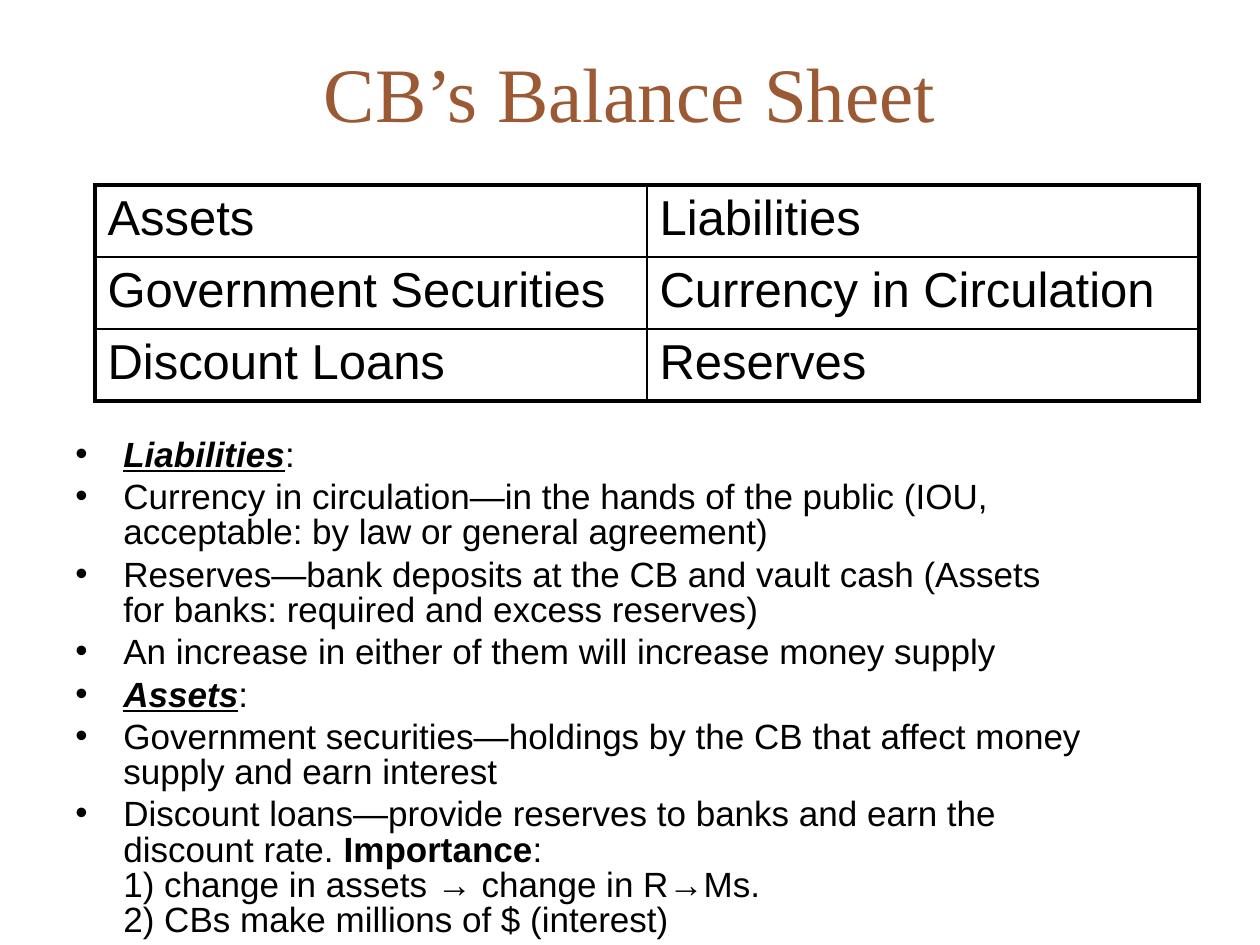
"""Build the central bank balance sheet slide."""
import pptx
import pptx.dml.color
import pptx.enum.text
import pptx.oxml
import pptx.oxml.ns
import pptx.util

THEME = {
    "ink": "000000", "title": "9B5934",
    "title_font": "Times New Roman", "body_font": "Arial",
    "title_size": 44, "table_size": 28, "body_size": 20,
    "outer_line": 2.25, "inner_line": 1,
}
SCALE = 914400 / 126


def px(length):
    return pptx.util.Emu(round(length * SCALE))


def style(font, name, size, color):
    font.name = name
    font.size = pptx.util.Pt(size)
    font.color.rgb = pptx.dml.color.RGBColor.from_string(color)


deck = pptx.Presentation()
deck.slide_width, deck.slide_height = px(1260), px(945)
page = deck.slides.add_slide(deck.slide_layouts[6])

title_box = page.shapes.add_textbox(px(63), px(38), px(1134), px(107))
title_box.text_frame.word_wrap = True
title_box.text_frame.vertical_anchor = pptx.enum.text.MSO_ANCHOR.MIDDLE
title_box.text_frame.text = "CB’s Balance Sheet"
title_para = title_box.text_frame.paragraphs[0]
title_para.alignment = pptx.enum.text.PP_ALIGN.CENTER
style(title_para.runs[0].font, THEME["title_font"], THEME["title_size"], THEME["title"])

entries = [
    ["Assets", "Liabilities"],
    ["Government Securities", "Currency in Circulation"],
    ["Discount Loans", "Reserves"],
]
row_count, column_count = len(entries), len(entries[0])
table = page.shapes.add_table(
    row_count, column_count, px(95), px(185), px(552 * column_count), px(72 * row_count)
).table
table.first_row = table.horz_banding = False
for row_index, labels in enumerate(entries):
    for column_index, label in enumerate(labels):
        cell = table.cell(row_index, column_index)
        cell.text = label
        style(cell.text_frame.paragraphs[0].runs[0].font,
              THEME["body_font"], THEME["table_size"], THEME["ink"])
        outer_edges = {
            "lnL": column_index == 0,
            "lnR": column_index == column_count - 1,
            "lnT": row_index == 0,
            "lnB": row_index == row_count - 1,
        }
        for edge, is_outer in outer_edges.items():
            width = pptx.util.Pt(THEME["outer_line" if is_outer else "inner_line"])
            cell._tc.get_or_add_tcPr().append(pptx.oxml.parse_xml(
                f'<a:{edge} {pptx.oxml.ns.nsdecls("a")} w="{width}"><a:solidFill>'
                f'<a:srgbClr val="{THEME["ink"]}"/></a:solidFill></a:{edge}>'))
        cell.fill.background()

heading, strong, plain = "heading", "strong", "plain"
notes = [
    [("Liabilities", heading), (":", plain)],
    [("Currency in circulation—in the hands of the public (IOU, "
      "acceptable: by law or general agreement)", plain)],
    [("Reserves—bank deposits at the CB and vault cash (Assets "
      "for banks: required and excess reserves)", plain)],
    [("An increase in either of them will increase money supply", plain)],
    [("Assets", heading), (":", plain)],
    [("Government securities—holdings by the CB that affect money "
      "supply and earn interest", plain)],
    [("Discount loans—provide reserves to banks and earn the discount rate. ", plain),
     ("Importance", strong),
     (":\n1) change in assets → change in R→Ms.\n2) CBs make millions of $ (interest)", plain)],
]
body_box = page.shapes.add_textbox(px(63), px(433), px(1033), px(512))
body_box.text_frame.word_wrap = True
for index, spans in enumerate(notes):
    para = body_box.text_frame.add_paragraph() if index else body_box.text_frame.paragraphs[0]
    para.line_spacing = 0.84
    if index:
        para.space_before = pptx.util.Pt(4)
    properties = para._p.get_or_add_pPr()
    properties.set("marL", str(px(48)))
    properties.set("indent", str(-px(48)))
    for bullet in (f'<a:buClr {{}}><a:srgbClr val="{THEME["ink"]}"/></a:buClr>',
                   f'<a:buFont {{}} typeface="{THEME["body_font"]}"/>',
                   '<a:buChar {} char="•"/>'):
        properties.append(pptx.oxml.parse_xml(bullet.format(pptx.oxml.ns.nsdecls("a"))))
    for text, look in spans:
        for line_index, line in enumerate(text.split("\n")):
            if line_index:
                para.add_line_break()
            span = para.add_run()
            span.text = line
            style(span.font, THEME["body_font"], THEME["body_size"], THEME["ink"])
            span.font.bold = look != plain
            span.font.italic = span.font.underline = look == heading

deck.save("out.pptx")
